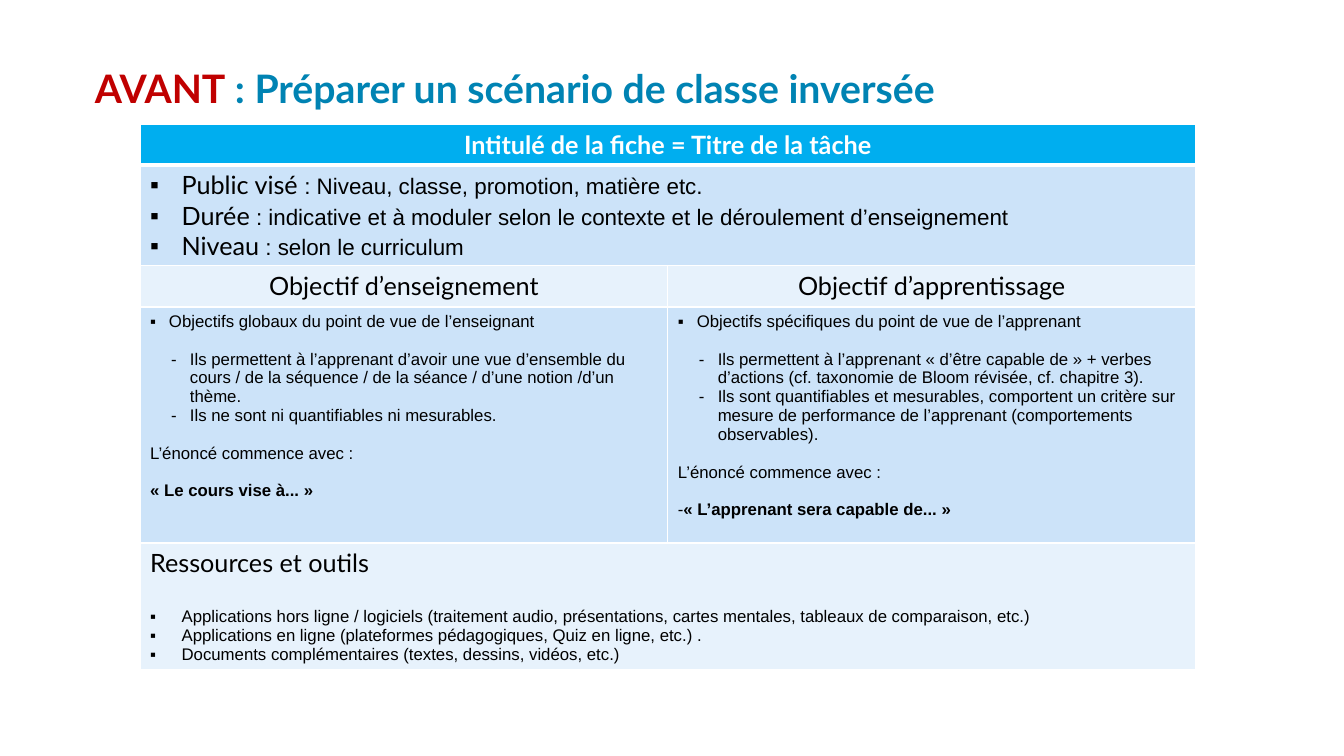
from dataclasses import dataclass

from lxml import etree
from pptx import Presentation
from pptx.dml.color import RGBColor
from pptx.enum.text import MSO_ANCHOR, PP_ALIGN
from pptx.oxml.ns import qn
from pptx.util import Inches, Pt

BOTTOM = MSO_ANCHOR.BOTTOM
LEFT, CENTER = PP_ALIGN.LEFT, PP_ALIGN.CENTER

# Grid of 96 columns by 54 rows
SLIDE_WIDTH, SLIDE_HEIGHT = Inches(13.333), Inches(7.5)
HEADING_FONT, BODY_FONT = "Lato", "Arial"
RED, BLUE, WHITE, BLACK = "C00000", "0083B3", "FFFFFF", "000000"
HEADER_FILL, DARK_FILL, LIGHT_FILL = "00AEEF", "CCE3F9", "E7F2FC"
SMALL_GAP, LARGE_GAP = 13.5, 21
ROW_HEIGHTS = (2.88, 7.13, 2.95, 16.85, 9.07)
COLUMN_WIDTH = 37.7


@dataclass(frozen=True)
class Span:
    text: str
    size: float = 12
    font: str = BODY_FONT
    color: str = BLACK
    bold: bool = False


@dataclass(frozen=True)
class Line:
    spans: tuple[Span, ...]
    bullet: str = ""
    margin: float = 0
    hanging: float = 0
    level: int = 0
    gap: float = 0
    alignment: int = LEFT


@dataclass(frozen=True)
class CellContent:
    row: int
    column: int
    fill: str
    lines: tuple[Line, ...]
    merged: bool = False


def columns(count: float) -> int:
    return round(SLIDE_WIDTH * count / 96)


def rows(count: float) -> int:
    return round(SLIDE_HEIGHT * count / 54)


def rgb(color: str) -> RGBColor:
    return RGBColor.from_string(color)


def heading(text: str, color: str = BLACK, bold: bool = False,
            alignment: int = CENTER) -> Line:
    return Line((Span(text, 18, HEADING_FONT, color, bold),), alignment=alignment)


def fact(label: str, detail: str) -> Line:
    spans = (Span(label, 18, HEADING_FONT), Span(detail, 16))
    return Line(spans, "▪", 2.25, 2.25)


def topic(text: str) -> Line:
    return Line((Span(text),), "▪", 1.35, 1.35)


def detail(text: str, gap: float = 0) -> Line:
    return Line((Span(text),), "-", 2.85, 1.35, 1, gap)


def resource(text: str, gap: float = 0) -> Line:
    return Line((Span(text),), "▪", 2.25, 2.25, gap=gap)


def statement(text: str, bold: bool = False, bullet: str = "") -> Line:
    return Line((Span(text, bold=bold),), bullet, gap=SMALL_GAP)


def add_spans(paragraph, spans: tuple[Span, ...]) -> None:
    for span in spans:
        run = paragraph.add_run()
        run.text = span.text
        run.font.size = Pt(span.size)
        run.font.name = span.font
        run.font.bold = span.bold
        run.font.color.rgb = rgb(span.color)


def add_line(paragraph, line: Line) -> None:
    properties = paragraph._p.get_or_add_pPr()
    properties.set("marL", str(columns(line.margin)))
    properties.set("indent", str(-columns(line.hanging)))
    if line.bullet:
        etree.SubElement(properties, qn("a:buFont"), typeface=BODY_FONT)
        etree.SubElement(properties, qn("a:buChar"), char=line.bullet)
    paragraph.level = line.level
    paragraph.alignment = line.alignment
    if line.gap:
        paragraph.space_before = Pt(line.gap)
    add_spans(paragraph, line.spans)


def style_cell(cell, fill: str, top: float, bottom: float) -> None:
    properties = cell._tc.get_or_add_tcPr()
    for side, width in (("L", 1), ("R", 1), ("T", top), ("B", bottom)):
        border = etree.SubElement(properties, qn(f"a:ln{side}"), w=str(Pt(width)))
        border_fill = etree.SubElement(border, qn("a:solidFill"))
        etree.SubElement(border_fill, qn("a:srgbClr"), val=WHITE)
    cell.fill.solid()
    cell.fill.fore_color.rgb = rgb(fill)


def fill_cell(table, content: CellContent) -> None:
    cell = table.cell(content.row, content.column)
    last_column = 1 if content.merged else content.column
    if content.merged:
        cell.merge(table.cell(content.row, last_column))
    top = 3 if content.row == 1 else 1
    bottom = 3 if content.row == 0 else 1
    for column in range(content.column, last_column + 1):
        style_cell(table.cell(content.row, column), content.fill, top, bottom)
    frame = cell.text_frame
    for index, line in enumerate(content.lines):
        paragraph = frame.add_paragraph() if index else frame.paragraphs[0]
        add_line(paragraph, line)


CELLS = (
    CellContent(0, 0, HEADER_FILL, (
        heading("Intitulé de la fiche = Titre de la tâche", WHITE, True),
    ), True),
    CellContent(1, 0, DARK_FILL, (
        fact("Public visé ", ": Niveau, classe, promotion, matière etc."),
        fact("Durée", " : indicative et à moduler selon le contexte et le "
                      "déroulement d’enseignement"),
        fact("Niveau", " : selon le curriculum"),
    ), True),
    CellContent(2, 0, LIGHT_FILL, (heading("Objectif d’enseignement"),)),
    CellContent(2, 1, LIGHT_FILL, (heading("Objectif d’apprentissage"),)),
    CellContent(3, 0, DARK_FILL, (
        topic("Objectifs globaux du point de vue de l’enseignant"),
        detail("Ils permettent à l’apprenant d’avoir une vue d’ensemble du cours / "
               "de la séquence / de la séance / d’une notion /d’un thème.", SMALL_GAP),
        detail("Ils ne sont ni quantifiables ni mesurables."),
        statement("L’énoncé commence avec :"),
        statement("« Le cours vise à... »", True),
    )),
    CellContent(3, 1, DARK_FILL, (
        topic("Objectifs spécifiques du point de vue de l’apprenant"),
        detail("Ils permettent à l’apprenant « d’être capable de » + verbes d’actions "
               "(cf. taxonomie de Bloom révisée, cf. chapitre 3).", SMALL_GAP),
        detail("Ils sont quantifiables et mesurables, comportent un critère sur mesure "
               "de performance de l’apprenant (comportements observables)."),
        statement("L’énoncé commence avec :"),
        statement("« L’apprenant sera capable de... »", True, "-"),
    )),
    CellContent(4, 0, LIGHT_FILL, (
        heading("Ressources et outils", alignment=LEFT),
        resource("Applications hors ligne / logiciels (traitement audio, présentations, "
                 "cartes mentales, tableaux de comparaison, etc.)", LARGE_GAP),
        resource("Applications en ligne (plateformes pédagogiques, Quiz en ligne, etc.) ."),
        resource("Documents complémentaires (textes, dessins, vidéos, etc.)"),
    ), True),
)


def add_title(slide) -> None:
    title = slide.shapes.title
    title.left, title.top = columns(6.05), rows(4.18)
    title.width, title.height = columns(83.4), rows(4.1)
    title.text_frame.vertical_anchor = BOTTOM
    title.text_frame.word_wrap = True
    paragraph = title.text_frame.paragraphs[0]
    paragraph.alignment = LEFT
    paragraph.line_spacing = 0.8
    add_spans(paragraph, (
        Span("AVANT", 28, HEADING_FONT, RED, True),
        Span(" : Préparer un scénario de classe inversée", 28, HEADING_FONT, BLUE, True),
    ))


def add_lesson_table(slide) -> None:
    frame = slide.shapes.add_table(
        len(ROW_HEIGHTS), 2, columns(10), rows(8.9),
        columns(2 * COLUMN_WIDTH), rows(sum(ROW_HEIGHTS)))
    table = frame.table
    for column in table.columns:
        column.width = columns(COLUMN_WIDTH)
    for row, height in zip(table.rows, ROW_HEIGHTS):
        row.height = rows(height)
    for content in CELLS:
        fill_cell(table, content)


def main() -> None:
    presentation = Presentation()
    presentation.slide_width, presentation.slide_height = SLIDE_WIDTH, SLIDE_HEIGHT
    slide = presentation.slides.add_slide(presentation.slide_layouts[5])
    add_title(slide)
    add_lesson_table(slide)
    presentation.save("out.pptx")


if __name__ == "__main__":
    main()
